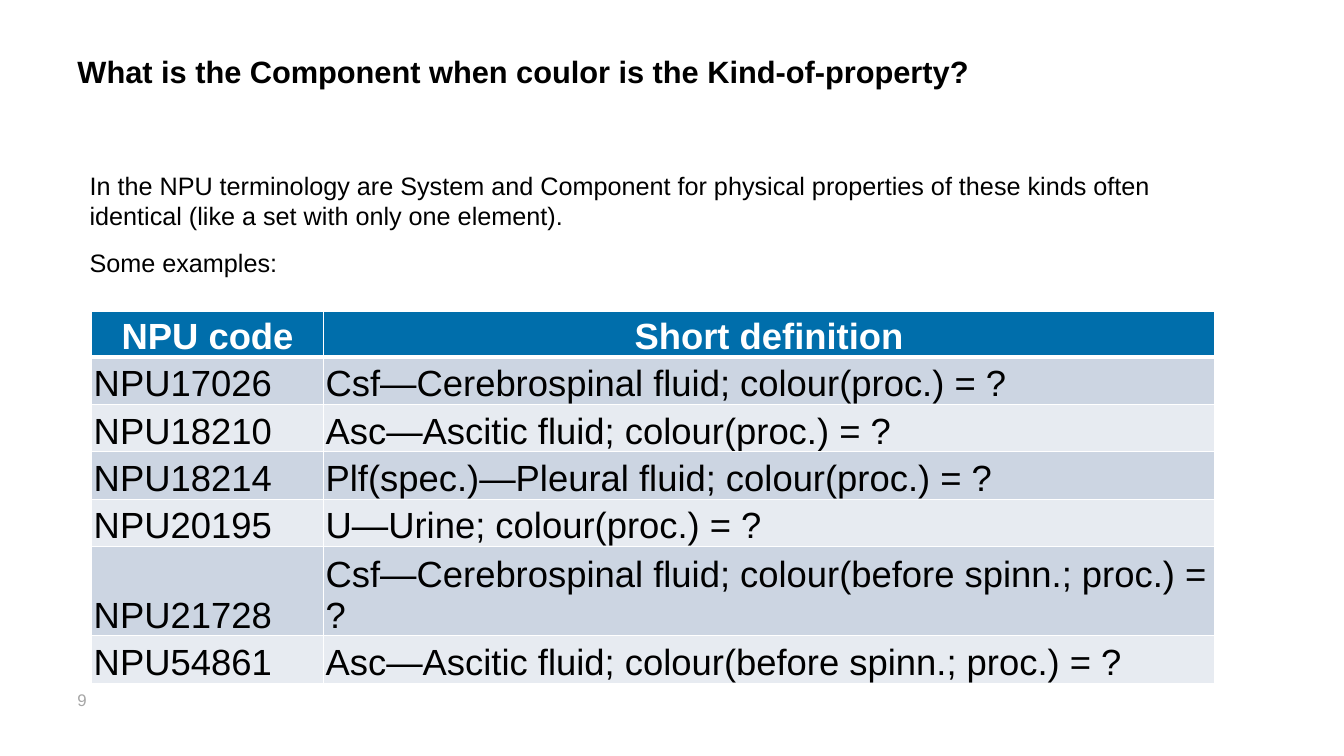
from lxml.etree import SubElement
from pptx import Presentation
from pptx.dml.color import RGBColor
from pptx.enum.text import MSO_ANCHOR as Anchor, PP_ALIGN as Align
from pptx.oxml.ns import qn
from pptx.util import Inches, Pt

COLORS = {
    "text": "000000",
    "white": "FFFFFF",
    "page_number": "A6A6A6",
    "header": "006EAB",
    "odd_row": "CCD5E2",
    "even_row": "E7EBF1",
}
HEADINGS = ("NPU code", "Short definition")
EXAMPLES = [
    ("NPU17026", "Csf—Cerebrospinal fluid; colour(proc.) = ?"),
    ("NPU18210", "Asc—Ascitic fluid; colour(proc.) = ?"),
    ("NPU18214", "Plf(spec.)—Pleural fluid; colour(proc.) = ?"),
    ("NPU20195", "U—Urine; colour(proc.) = ?"),
    ("NPU21728", "Csf—Cerebrospinal fluid; colour(before spinn.; proc.) = ?"),
    ("NPU54861", "Asc—Ascitic fluid; colour(before spinn.; proc.) = ?"),
]
COLUMN_WIDTHS = (2.3, 8.84)
HEADER_HEIGHT, ROW_HEIGHT = 0.42, 0.47


def write(paragraph, text, size, color="text", bold=False, align=Align.LEFT, after=0):
    paragraph.alignment = align
    paragraph.space_after = Pt(after)
    run = paragraph.add_run()
    run.text = text
    run.font.name = "Arial"
    run.font.size = Pt(size)
    run.font.bold = bold
    run.font.color.rgb = RGBColor.from_string(COLORS[color])


def add_text(slide, box, paragraphs, after=0, **style):
    """Add a wrapping text box; `after` is the space below each paragraph but the last."""
    frame = slide.shapes.add_textbox(*map(Inches, box)).text_frame
    frame.word_wrap = True
    for index, text in enumerate(paragraphs):
        last = index == len(paragraphs) - 1
        paragraph = frame.add_paragraph() if index else frame.paragraphs[0]
        write(paragraph, text, after=0 if last else after, **style)


def set_borders(cell, top=1, bottom=1):
    """Draw white borders; these must precede the fill in the cell properties."""
    properties = cell._tc.get_or_add_tcPr()
    for side, width in (("L", 1), ("R", 1), ("T", top), ("B", bottom)):
        line = SubElement(properties, qn(f"a:ln{side}"), w=str(Pt(width)))
        fill = SubElement(line, qn("a:solidFill"))
        SubElement(fill, qn("a:srgbClr"), val=COLORS["white"])


def fill_cell(cell, text, fill, top=1, bottom=1, **style):
    set_borders(cell, top, bottom)
    cell.fill.solid()
    cell.fill.fore_color.rgb = RGBColor.from_string(COLORS[fill])
    cell.vertical_anchor = Anchor.BOTTOM
    cell.margin_left = cell.margin_right = cell.margin_top = Inches(0.02)
    cell.margin_bottom = 0
    write(cell.text_frame.paragraphs[0], text, 26, **style)


def add_examples_table(slide):
    height = HEADER_HEIGHT + ROW_HEIGHT * len(EXAMPLES)
    box = (0.91, 3.09, sum(COLUMN_WIDTHS), height)
    table = slide.shapes.add_table(
        len(EXAMPLES) + 1, len(HEADINGS), *map(Inches, box)
    ).table
    for column, width in zip(table.columns, COLUMN_WIDTHS):
        column.width = Inches(width)
    for index, row in enumerate(table.rows):
        row.height = Inches(ROW_HEIGHT if index else HEADER_HEIGHT)

    for column, heading in enumerate(HEADINGS):
        fill_cell(table.cell(0, column), heading, "header", bottom=3,
                  color="white", bold=True, align=Align.CENTER)
    for row, example in enumerate(EXAMPLES, start=1):
        fill = "odd_row" if row % 2 else "even_row"
        for column, text in enumerate(example):
            fill_cell(table.cell(row, column), text, fill, top=3 if row == 1 else 1)


def main():
    deck = Presentation()
    deck.slide_width, deck.slide_height = Inches(13.33), Inches(7.5)
    slide = deck.slides.add_slide(deck.slide_layouts[6])

    add_text(slide, (0.67, 0.47, 9.55, 1),
             ["What is the Component when coulor is the Kind-of-property?"],
             size=22, bold=True)
    add_text(slide, (0.67, 6.79, 1.33, 0.4), ["9"], size=12, color="page_number")
    add_examples_table(slide)
    add_text(slide, (0.79, 1.64, 11.26, 1.18),
             ["In the NPU terminology are System and Component for physical properties "
              "of these kinds often identical (like a set with only one element).",
              "Some examples:"],
             size=18, after=12)

    deck.save("out.pptx")


if __name__ == "__main__":
    main()
